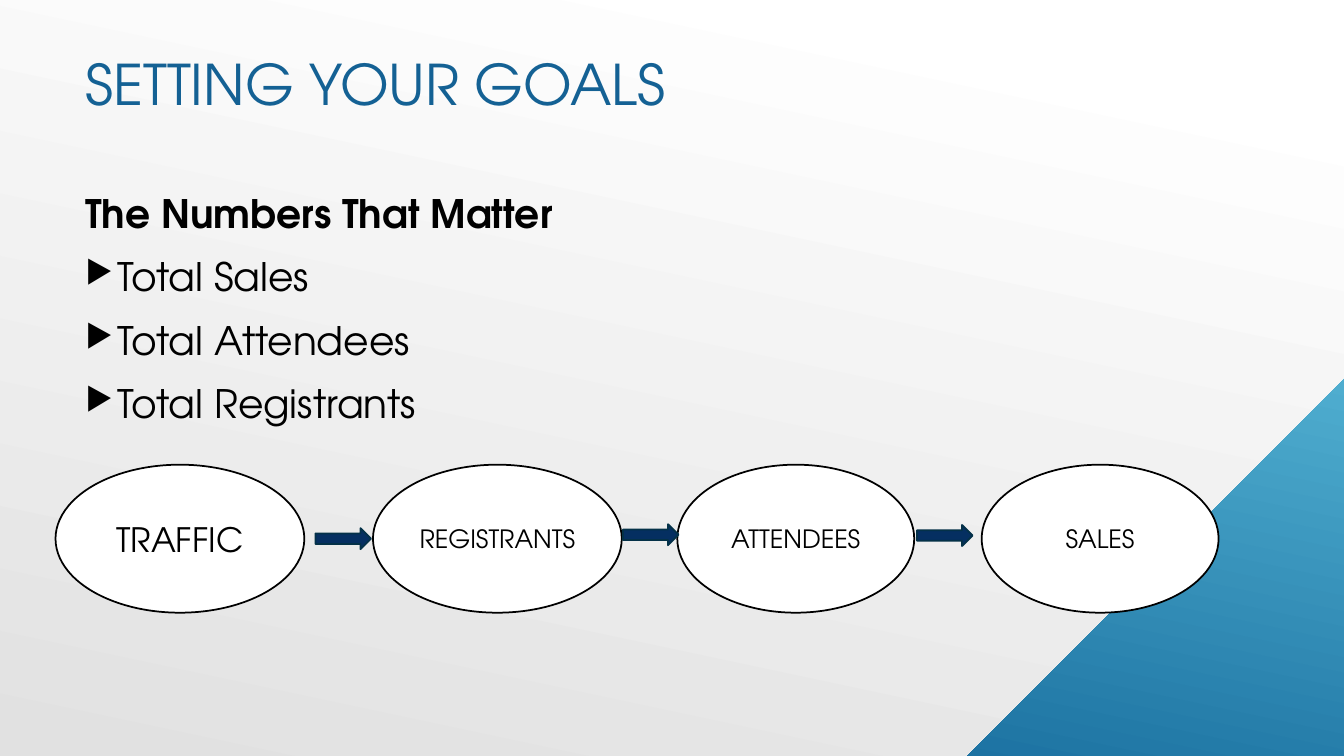
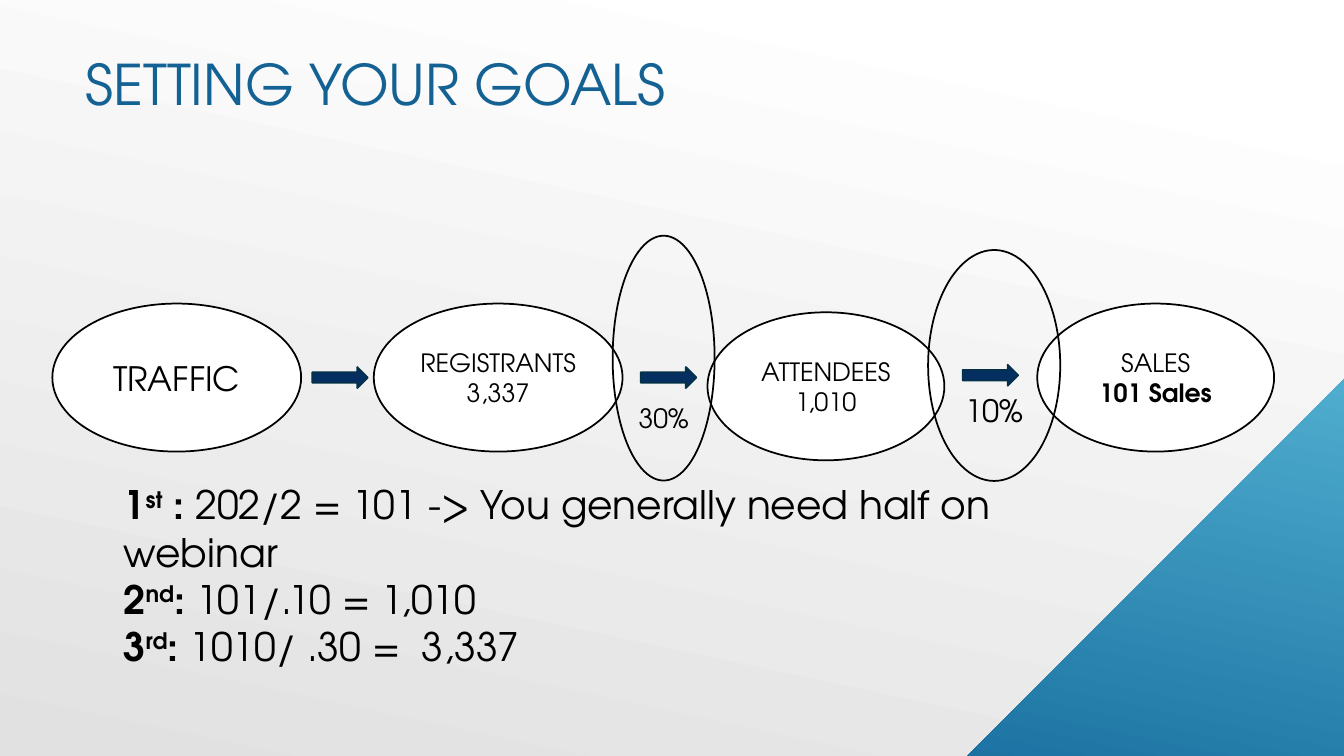
"""Build two slides on setting webinar goals."""
from lxml import etree
from pptx import Presentation
from pptx import util as u
from pptx.dml.color import RGBColor
from pptx.enum import shapes, text
from pptx.oxml.ns import qn

FONT = "TeX Gyre Adventor"
COLORS = {"title": "146194", "ink": "000000", "white": "FFFFFF", "grey": "E1E1E1",
          "sky": "6ED2EB", "ocean": "06588E", "arrow": "052F61", "edge": "043148"}
RGB = {name: RGBColor.from_string(value) for name, value in COLORS.items()}
OVAL = shapes.MSO_SHAPE.OVAL
ARROW = shapes.MSO_SHAPE.RIGHT_ARROW
LEFT, CENTER = text.PP_ALIGN.LEFT, text.PP_ALIGN.CENTER
TOP, MIDDLE = text.MSO_ANCHOR.TOP, text.MSO_ANCHOR.MIDDLE


def write(frame, lines, size, color="ink", align=LEFT, anchor=MIDDLE):
    """Fill a frame with lines, each a list of (words, style) pairs."""
    frame.word_wrap = True
    frame.vertical_anchor = anchor
    for index, line in enumerate(lines):
        para = frame.add_paragraph() if index else frame.paragraphs[0]
        para.alignment = align
        for words, style in line:
            span = para.add_run()
            span.text = words
            look = {"name": FONT, "size": u.Pt(size), "bold": "bold" in style}
            for key, value in look.items():
                setattr(span.font, key, value)
            span.font.color.rgb = RGB[color]
            if "raised" in style:
                span._r.get_or_add_rPr().set("baseline", "30000")


def draw(page, kind, place, fill, line):
    """Add a flat outlined shape, with its place in centimetres."""
    shape = page.shapes.add_shape(kind, *map(u.Cm, place))
    shape.shadow.inherit = False
    if fill:
        shape.fill.solid()
        shape.fill.fore_color.rgb = RGB[fill]
    else:
        shape.fill.background()
    shape.line.color.rgb = RGB[line]
    shape.line.width = u.Pt(1.25)
    shape.text_frame.margin_left = shape.text_frame.margin_right = 0
    return shape


deck = Presentation()
deck.slide_width, deck.slide_height = u.Cm(33.87), u.Cm(19.05)
width, height = deck.slide_width, deck.slide_height
layout = deck.slide_layouts[5]
goals, numbers = [deck.slides.add_slide(layout) for _ in range(2)]

outline = goals.shapes.build_freeform(0, 0)
outline.add_line_segments([(width, 0), (width, height // 2),
                           (width - height // 2, height), (0, height)])
panel = outline.convert_to_shape()
panel.shadow.inherit = False
panel.line.fill.background()
for fill, ends in ((deck.slide_master.background.fill, ("sky", "ocean")),
                   (panel.fill, ("white", "grey"))):
    fill.gradient()
    fill.gradient_angle = 258
    for stop, position, color in zip(fill.gradient_stops, (0.1, 1), ends):
        stop.position = position
        stop.color.rgb = RGB[color]
layout.shapes.element.insert(2, panel.element)

for page in (goals, numbers):
    title = page.shapes.title
    for key, value in {"left": 1.9, "top": 0, "width": 23.7, "height": 4.19}.items():
        setattr(title, key, u.Cm(value))
    write(title.text_frame, [[("SETTING YOUR GOALS", "")]], 40, "title")

box = goals.shapes.add_textbox(u.Cm(1.9), u.Cm(4.65), u.Cm(25.1), u.Cm(6.8))
write(box.text_frame, [[("The Numbers That Matter", "bold")], [("Total Sales", "")],
                       [("Total Attendees", "")], [("Total Registrants", "")]],
      28, anchor=TOP)
for index, para in enumerate(box.text_frame.paragraphs):
    para.space_after = u.Pt(11.6)
    if index:
        props = para._p.get_or_add_pPr()
        props.set("marL", str(u.Cm(0.8)))
        props.set("indent", str(-u.Cm(0.8)))
        tint = etree.SubElement(props, qn("a:buClr"))
        etree.SubElement(tint, qn("a:srgbClr"), val=COLORS["ink"])
        etree.SubElement(props, qn("a:buSzPct"), val="80000")
        etree.SubElement(props, qn("a:buChar"), char="▶")

stages = [
    (goals, 1.4, 11.71, 6.27, 24, [("TRAFFIC", "")]),
    (goals, 9.4, 11.71, 6.27, 18, [("REGISTRANTS", "")]),
    (goals, 17.07, 11.71, 5.97, 18, [("ATTENDEES", "")]),
    (goals, 24.74, 11.71, 5.97, 18, [("SALES", "")]),
    (numbers, 1.32, 7.65, 6.27, 24, [("TRAFFIC", "")]),
    (numbers, 9.42, 7.65, 6.27, 18, [("REGISTRANTS", ""), ("3,337", "")]),
    (numbers, 17.83, 7.87, 5.97, 18, [("ATTENDEES", ""), ("1,010", "")]),
    (numbers, 26.14, 7.65, 5.97, 18, [("SALES", ""), ("101 Sales", "bold")]),
]
for page, left, top, wide, size, words in stages:
    stage = draw(page, OVAL, (left, top, wide, 3.73), "white", "ink")
    write(stage.text_frame, [[pair] for pair in words], size, align=CENTER)

for page, left, top in ((goals, 7.95, 13.31), (goals, 15.7, 13.21), (goals, 23.11, 13.23),
                        (numbers, 7.87, 9.25), (numbers, 16.15, 9.25),
                        (numbers, 24.26, 9.19)):
    draw(page, ARROW, (left, top, 1.4, 0.53), "arrow", "edge")

box = numbers.shapes.add_textbox(u.Cm(2.87), u.Cm(11.99), u.Cm(23.27), u.Cm(6.63))
write(box.text_frame, [
    [("1", "bold"), ("st", "bold raised"), (" :", "bold"),
     (" 202/2 = 101 -> You generally need half on webinar", "")],
    [("2", "bold"), ("nd", "bold raised"), (": ", "bold"), ("101/.10 = 1,010", "")],
    [("3", "bold"), ("rd", "bold raised"), (": ", "bold"), ("1010/ .30 =  3,337", "")],
], 28, anchor=TOP)

for place, rate, size, drop in (((23.39, 6.3, 3.33, 5.82), "10%", 22, 2.36),
                                ((15.44, 5.94, 2.57, 6.17), "30%", 19, 3.15)):
    ring = draw(numbers, OVAL, place, None, "ink")
    ring.text_frame.margin_top = u.Cm(drop)
    write(ring.text_frame, [[(rate, "")]], size, align=CENTER)

deck.save("out.pptx")
